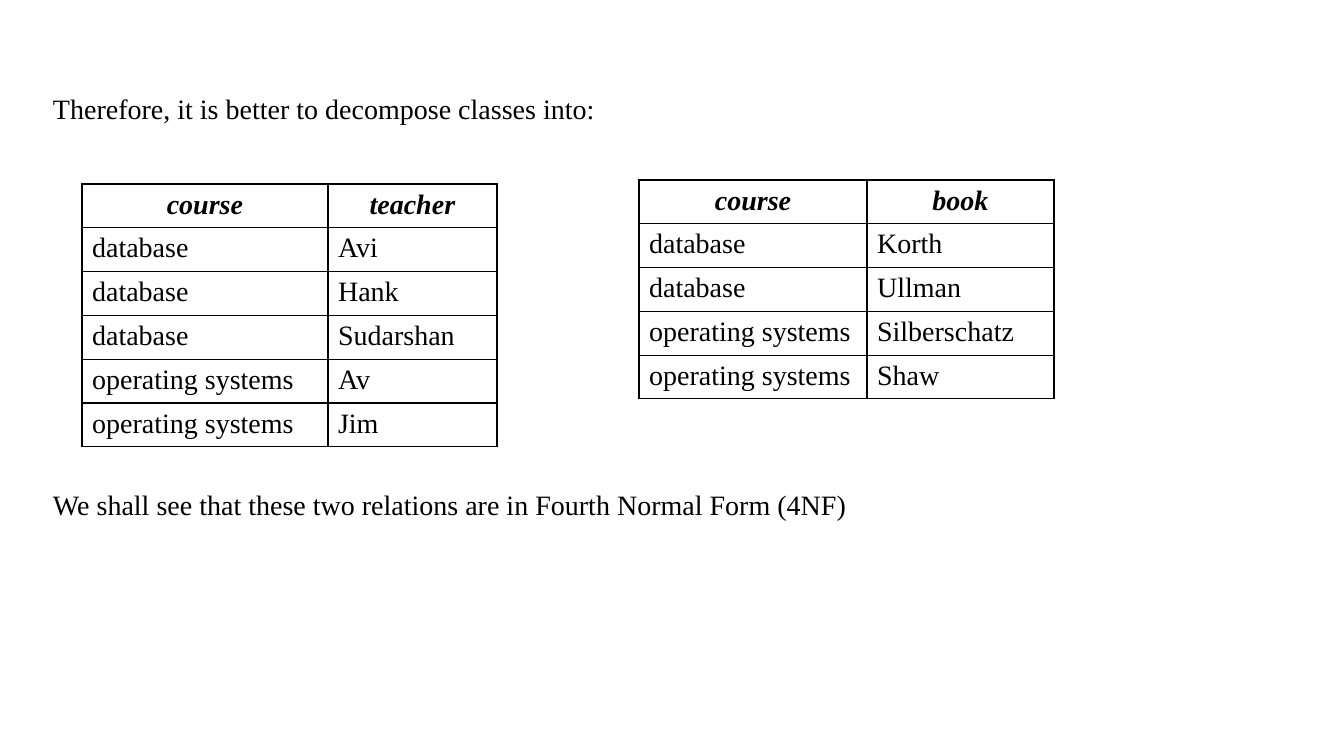
from lxml.etree import SubElement
from pptx import Presentation
from pptx.dml.color import RGBColor
from pptx.enum.text import MSO_AUTO_SIZE, PP_ALIGN
from pptx.oxml.ns import qn
from pptx.util import Emu, Pt

BLACK = RGBColor(0, 0, 0)
FONT, SIZE = "Times New Roman", Pt(20)
BORDER = Pt(1)
SLIDE_W, SLIDE_H = 1344, 756
TEXT_H = 44

# text, (left, top, width)
STATEMENTS = [
    ("Therefore, it is better to decompose classes into:", (43, 87, 673)),
    ("We shall see that these two relations are in Fourth Normal Form (4NF)",
     (43, 483, 1074)),
]

# (left, top, height), column widths, rows with the header first
RELATIONS = [
    ((82, 184, 263), (246, 169), [
        ("course", "teacher"),
        ("database", "Avi"),
        ("database", "Hank"),
        ("database", "Sudarshan"),
        ("operating systems", "Av"),
        ("operating systems", "Jim"),
    ]),
    ((639, 180, 219), (228, 187), [
        ("course", "book"),
        ("database", "Korth"),
        ("database", "Ullman"),
        ("operating systems", "Silberschatz"),
        ("operating systems", "Shaw"),
    ]),
]


def px(n):
    """Turn pixels, 100.8 to the inch, into EMU."""
    return Emu(round(n * 914400 / 100.8))


def write(tf, text, header=False):
    p = tf.paragraphs[0]
    p.text = text
    p.alignment = PP_ALIGN.CENTER if header else PP_ALIGN.LEFT
    font = p.runs[0].font
    font.name, font.size = FONT, SIZE
    font.bold = font.italic = header
    font.color.rgb = BLACK


def add_borders(cell):
    tcPr = cell._tc.get_or_add_tcPr()
    for side in ("a:lnL", "a:lnR", "a:lnT", "a:lnB"):
        ln = SubElement(tcPr, qn(side), w=str(BORDER))
        fill = SubElement(ln, qn("a:solidFill"))
        SubElement(fill, qn("a:srgbClr"), val=str(BLACK))


def add_statement(slide, text, place):
    left, top, width = map(px, place)
    tf = slide.shapes.add_textbox(left, top, width, px(TEXT_H)).text_frame
    tf.word_wrap = True
    tf.auto_size = MSO_AUTO_SIZE.SHAPE_TO_FIT_TEXT
    write(tf, text)


def add_relation(slide, place, widths, rows):
    left, top, height = map(px, place)
    table = slide.shapes.add_table(len(rows), len(widths), left, top,
                                   px(sum(widths)), height).table
    table.first_row = table.horz_banding = False
    for column, width in zip(table.columns, widths):
        column.width = px(width)
    for r, row in enumerate(rows):
        for c, text in enumerate(row):
            cell = table.cell(r, c)
            add_borders(cell)
            cell.fill.background()
            write(cell.text_frame, text, header=r == 0)


def main():
    prs = Presentation()
    prs.slide_width, prs.slide_height = px(SLIDE_W), px(SLIDE_H)
    slide = prs.slides.add_slide(prs.slide_layouts[6])
    for statement in STATEMENTS:
        add_statement(slide, *statement)
    for relation in RELATIONS:
        add_relation(slide, *relation)
    prs.save("out.pptx")


if __name__ == "__main__":
    main()
